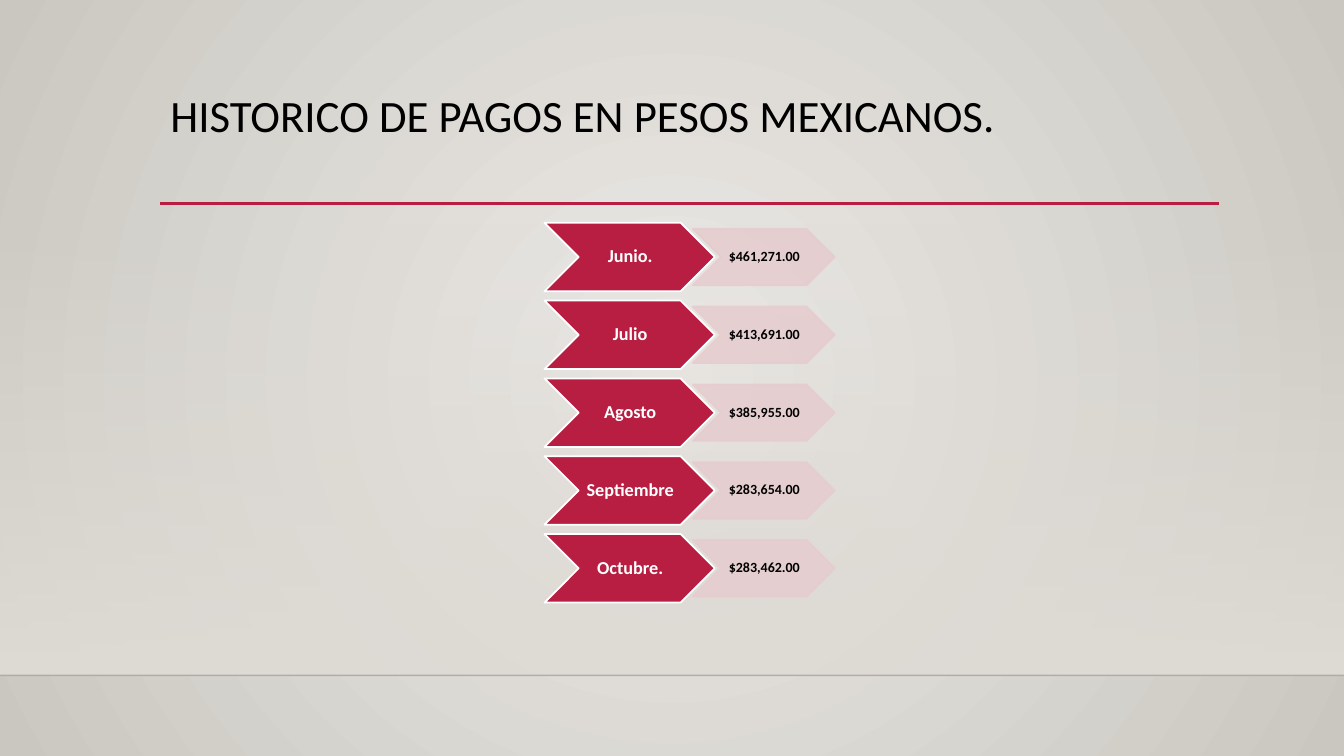
from lxml import etree
from pptx import Presentation
from pptx.dml.color import RGBColor
from pptx.enum import shapes, text
from pptx.oxml.ns import qn
from pptx.util import Inches, Pt

CRIMSON = RGBColor(0xB7, 0x1E, 0x42)
PINK = RGBColor(0xE6, 0xCD, 0xCF)
WHITE = RGBColor(0xFF, 0xFF, 0xFF)
BLACK = RGBColor(0x00, 0x00, 0x00)
BG_CENTRE = RGBColor(0xEC, 0xEA, 0xE7)
BG_EDGE = RGBColor(0xCA, 0xC7, 0xC1)
FLOOR = RGBColor(0xDF, 0xDB, 0xD5)

FONT = "Calibri"
SLIDE_W, SLIDE_H = 13.33, 7.5

PAYMENTS = [
    ("Junio.", "$461,271.00"),
    ("Julio", "$413,691.00"),
    ("Agosto", "$385,955.00"),
    ("Septiembre", "$283,654.00"),
    ("Octubre.", "$283,462.00"),
]


def set_opacity(element, percent):
    """Apply an opacity to every RGB colour below an XML element."""
    for color in element.iter(qn("a:srgbClr")):
        etree.SubElement(color, qn("a:alpha")).set("val", str(percent * 1000))


def set_gradient(fill, start, end):
    fill.gradient()
    for stop, color in zip(fill.gradient_stops, (start, end)):
        stop.color.rgb = color


def add_rule(s, x1, x2, y, color, width):
    line = s.shapes.add_connector(
        shapes.MSO_CONNECTOR.STRAIGHT, Inches(x1), Inches(y), Inches(x2), Inches(y))
    line.line.color.rgb = color
    line.line.width = Pt(width)
    etree.SubElement(line.element.spPr, qn("a:effectLst"))
    return line


def add_run(p, words, size, color, bold=False):
    p.line_spacing = 0.9
    r = p.add_run()
    r.text = words
    r.font.name = FONT
    r.font.size = Pt(size)
    r.font.bold = bold
    r.font.color.rgb = color


def add_background(s):
    """Radial backdrop with a fading wall that meets the floor line."""
    set_gradient(s.background.fill, BG_CENTRE, BG_EDGE)
    grad = s.element.find(".//" + qn("p:bgPr")).find(qn("a:gradFill"))
    grad.remove(grad.find(qn("a:lin")))
    circle = etree.SubElement(grad, qn("a:path"))
    circle.set("path", "circle")
    centre = etree.SubElement(circle, qn("a:fillToRect"))
    for side in "ltrb":
        centre.set(side, "50000")

    top, floor = 2.21, 6.7
    wall = s.shapes.add_shape(
        shapes.MSO_SHAPE.RECTANGLE, 0, Inches(top), Inches(SLIDE_W), Inches(floor - top))
    wall.shadow.inherit = False
    wall.line.fill.background()
    set_gradient(wall.fill, FLOOR, FLOOR)
    wall.fill.gradient_angle = 270
    set_opacity(wall.element.spPr.find(".//" + qn("a:gs")), 0)

    line = add_rule(s, 0, SLIDE_W, floor, BLACK, 1)
    set_opacity(line.element.spPr, 20)


def add_title(s, x, y, w, h):
    title = s.shapes.title
    title.left, title.top, title.width, title.height = map(Inches, (x, y, w, h))
    tf = title.text_frame
    tf.word_wrap = True
    tf.auto_size = text.MSO_AUTO_SIZE.NONE
    tf.vertical_anchor = text.MSO_ANCHOR.TOP
    p = tf.paragraphs[0]
    p.alignment = text.PP_ALIGN.LEFT
    add_run(p, "HISTORICO DE PAGOS EN PESOS MEXICANOS.", 32, BLACK)
    add_rule(s, x, x + w, y + h, CRIMSON, 2.5)


def add_chevron(s, x, y, w, h, words, size, fill, line, color):
    sp = s.shapes.add_shape(
        shapes.MSO_SHAPE.CHEVRON, Inches(x), Inches(y), Inches(w), Inches(h))
    sp.shadow.inherit = False
    sp.fill.solid()
    sp.fill.fore_color.rgb = fill
    sp.line.color.rgb = line
    sp.line.width = Pt(1.25)
    tf = sp.text_frame
    tf.word_wrap = True
    tf.vertical_anchor = text.MSO_ANCHOR.MIDDLE
    tf.margin_left = tf.margin_top = tf.margin_bottom = Inches(0.01)
    tf.margin_right = 0
    p = tf.paragraphs[0]
    p.alignment = text.PP_ALIGN.CENTER
    add_run(p, words, size, color, bold=True)
    return sp


def add_payments(s, x, y, h):
    """One row per month: a dark chevron, then a paler one with the amount."""
    pitch = h / len(PAYMENTS)
    for i, (month, amount) in enumerate(PAYMENTS):
        top = y + i * pitch
        add_chevron(s, x, top, 1.69, 0.68, month, 13, CRIMSON, WHITE, WHITE)
        pale = add_chevron(s, x + 1.47, top + 0.06, 1.41, 0.56, amount, 10, PINK, PINK, BLACK)
        set_opacity(pale.element.spPr, 90)


def main():
    prs = Presentation()
    prs.slide_width, prs.slide_height = Inches(SLIDE_W), Inches(SLIDE_H)
    s = prs.slides.add_slide(prs.slide_layouts[5])
    add_background(s)
    add_title(s, 1.59, 0.88, 10.5, 1.14)
    add_payments(s, 5.4, 2.21, 3.86)
    prs.save("out.pptx")


if __name__ == "__main__":
    main()
